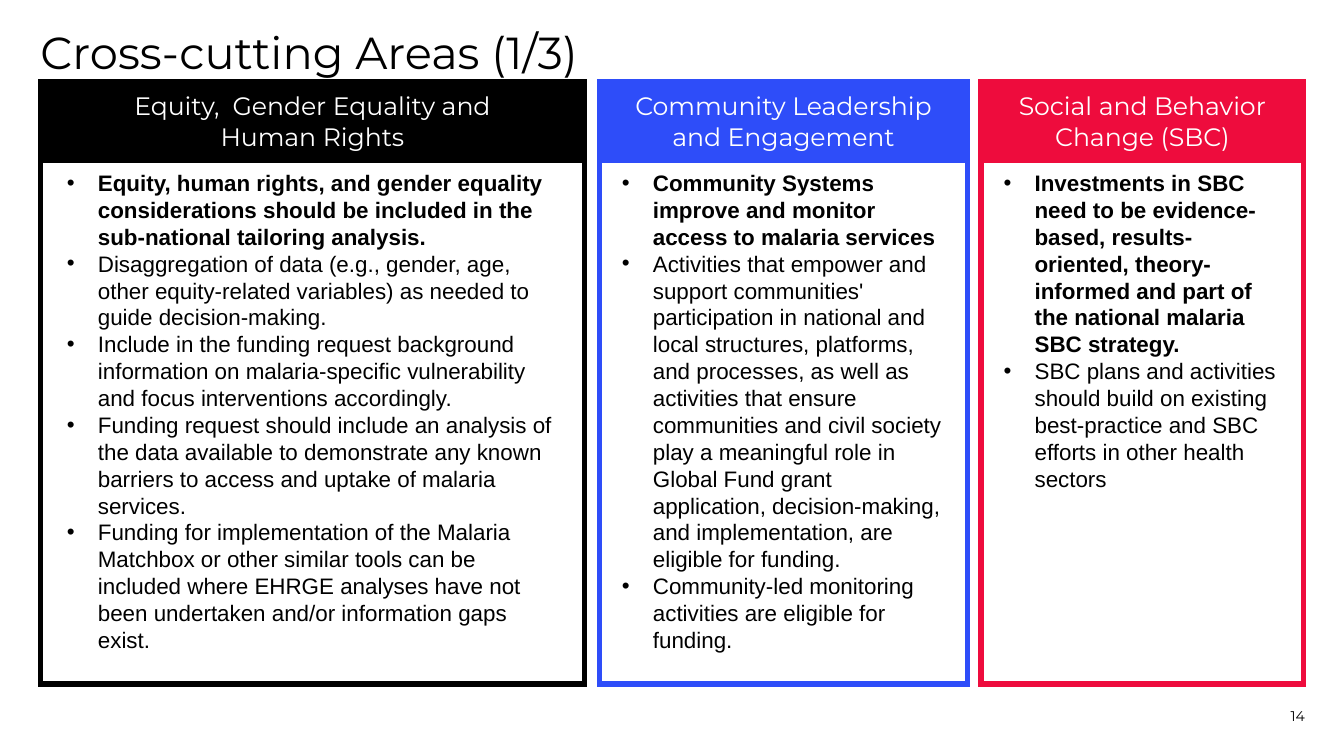
"""Build the slide on cross-cutting areas with three framed columns."""
import pptx
import pptx.dml.color
import pptx.enum.shapes
import pptx.enum.text
import pptx.util
from lxml import etree
from pptx.oxml.ns import qn

Inches = pptx.util.Inches
RGBColor = pptx.dml.color.RGBColor
Align = pptx.enum.text.PP_ALIGN
Anchor = pptx.enum.text.MSO_ANCHOR
AutoSize = pptx.enum.text.MSO_AUTO_SIZE

BLACK = RGBColor(0x00, 0x00, 0x00)
WHITE = RGBColor(0xFF, 0xFF, 0xFF)
BLUE = RGBColor(0x2E, 0x4D, 0xF9)
RED = RGBColor(0xEE, 0x0C, 0x3D)
HEADING_FONT = "Montserrat"
BODY_FONT = "Arial"

SLIDE_WIDTH = Inches(10)
SLIDE_HEIGHT = SLIDE_WIDTH * 9 // 16
TOP = 0.61
HEADER_HEIGHT = 0.58
COLUMN_HEIGHT = 4.48
BODY_TOP = 1.21
BULLET_INDENT = 0.23

COLUMNS = [
    dict(
        left=0.3, width=4.05, margin=0.1, body_height=3.74, color=BLACK,
        heading=["Equity,  Gender Equality and", "Human Rights"],
        bullets=[
            "Equity, human rights, and gender equality considerations should be "
            "included in the sub-national tailoring analysis.",
            "Disaggregation of data (e.g., gender, age, other equity-related "
            "variables) as needed to guide decision-making.",
            "Include in the funding request background information on "
            "malaria-specific vulnerability and focus interventions accordingly.",
            "Funding request should include an analysis of the data available to "
            "demonstrate any known barriers to access and uptake of malaria services.",
            "Funding for implementation of the Malaria Matchbox or other similar "
            "tools can be included where EHRGE analyses have not been undertaken "
            "and/or information gaps exist.",
        ],
    ),
    dict(
        left=7.3, width=2.4, margin=0.07, body_height=2.52, color=RED,
        heading=["Social and Behavior Change (SBC)"],
        bullets=[
            "Investments in SBC need to be evidence-based, results-oriented, "
            "theory-informed and part of the national malaria SBC strategy.",
            "SBC plans and activities should build on existing best-practice and "
            "SBC efforts in other health sectors",
        ],
    ),
    dict(
        left=4.46, width=2.74, margin=0.07, body_height=3.94, color=BLUE,
        heading=["Community Leadership and Engagement"],
        bullets=[
            "Community Systems improve and monitor access to malaria services",
            "Activities that empower and support communities' participation in "
            "national and local structures, platforms, and processes, as well as "
            "activities that ensure communities and civil society play a meaningful "
            "role in Global Fund grant application, decision-making, and "
            "implementation, are eligible for funding.",
            "Community-led monitoring activities are eligible for funding.",
        ],
    ),
]


def write_text(frame, lines, *, size, font=HEADING_FONT, color=BLACK, align=Align.LEFT,
               anchor=Anchor.TOP, bullets=False, bold_first=False, inset=None,
               line_spacing=None, auto_size=AutoSize.NONE):
    """Fill a text frame with one formatted paragraph per line."""
    frame.word_wrap = True
    frame.auto_size = auto_size
    frame.vertical_anchor = anchor
    if inset is not None:
        frame.margin_left = frame.margin_right = Inches(inset)
        frame.margin_top = frame.margin_bottom = Inches(inset)
    for index, line in enumerate(lines):
        paragraph = frame.paragraphs[0] if index == 0 else frame.add_paragraph()
        paragraph.alignment = align
        if line_spacing:
            paragraph.line_spacing = line_spacing
        if bullets:
            properties = paragraph._p.get_or_add_pPr()
            properties.set("marL", str(Inches(BULLET_INDENT)))
            properties.set("indent", str(-Inches(BULLET_INDENT)))
            etree.SubElement(properties, qn("a:buFont"), typeface=BODY_FONT)
            etree.SubElement(properties, qn("a:buChar"), char="•")
        run = paragraph.add_run()
        run.text = line
        run.font.name = font
        run.font.size = pptx.util.Pt(size)
        run.font.color.rgb = color
        run.font.bold = bold_first and index == 0


class SlideBuilder:
    """Hold the style and current slide, and add each kind of element."""

    def __init__(self, presentation):
        """Start a title-only slide."""
        self.slide = presentation.slides.add_slide(presentation.slide_layouts[5])
        self.line_width = pptx.util.Pt(3)

    def title(self, text, left, top, width, height):
        """Place and format the title placeholder."""
        shape = self.slide.shapes.title
        shape.left, shape.top = Inches(left), Inches(top)
        shape.width, shape.height = Inches(width), Inches(height)
        write_text(shape.text_frame, [text], size=24, anchor=Anchor.MIDDLE,
                   inset=0, line_spacing=0.9)

    def rectangle(self, left, top, width, height, color, filled=False):
        """Add a sharp-cornered rectangle, filled or open."""
        shape = self.slide.shapes.add_shape(
            pptx.enum.shapes.MSO_SHAPE.RECTANGLE,
            Inches(left), Inches(top), Inches(width), Inches(height))
        shape.shadow.inherit = False
        if filled:
            shape.fill.solid()
            shape.fill.fore_color.rgb = color
        else:
            shape.fill.background()
        shape.line.color.rgb = color
        shape.line.width = self.line_width
        outline = shape._element.spPr.find(qn("a:ln"))
        etree.SubElement(outline, qn("a:miter"), lim="800000")
        return shape

    def text_box(self, lines, left, top, width, height, **text_format):
        """Add a text box with formatted lines."""
        shape = self.slide.shapes.add_textbox(
            Inches(left), Inches(top), Inches(width), Inches(height))
        write_text(shape.text_frame, lines, **text_format)

    def column(self, left, width, margin, body_height, color, heading, bullets):
        """Add a heading band, its bullets and the frame around them."""
        header = self.rectangle(left, TOP, width, HEADER_HEIGHT, color, filled=True)
        write_text(header.text_frame, heading, size=13.5, color=WHITE,
                   align=Align.CENTER, anchor=Anchor.MIDDLE)
        self.text_box(bullets, left + margin, BODY_TOP, width - 2 * margin, body_height,
                      size=12, font=BODY_FONT, bullets=True, bold_first=True,
                      auto_size=AutoSize.SHAPE_TO_FIT_TEXT)
        self.rectangle(left, TOP, width, COLUMN_HEIGHT, color)


def main():
    """Create and save the presentation."""
    presentation = pptx.Presentation()
    presentation.slide_width = SLIDE_WIDTH
    presentation.slide_height = SLIDE_HEIGHT
    builder = SlideBuilder(presentation)
    builder.title("Cross-cutting Areas (1/3)", 0.3, 0.22, 9.41, 0.38)
    for column in COLUMNS:
        builder.column(**column)
    builder.text_box(["14"], 8.97, 5.09, 0.74, 0.3, size=7.5, align=Align.RIGHT,
                     anchor=Anchor.BOTTOM, inset=0)
    presentation.save("out.pptx")


if __name__ == "__main__":
    main()
